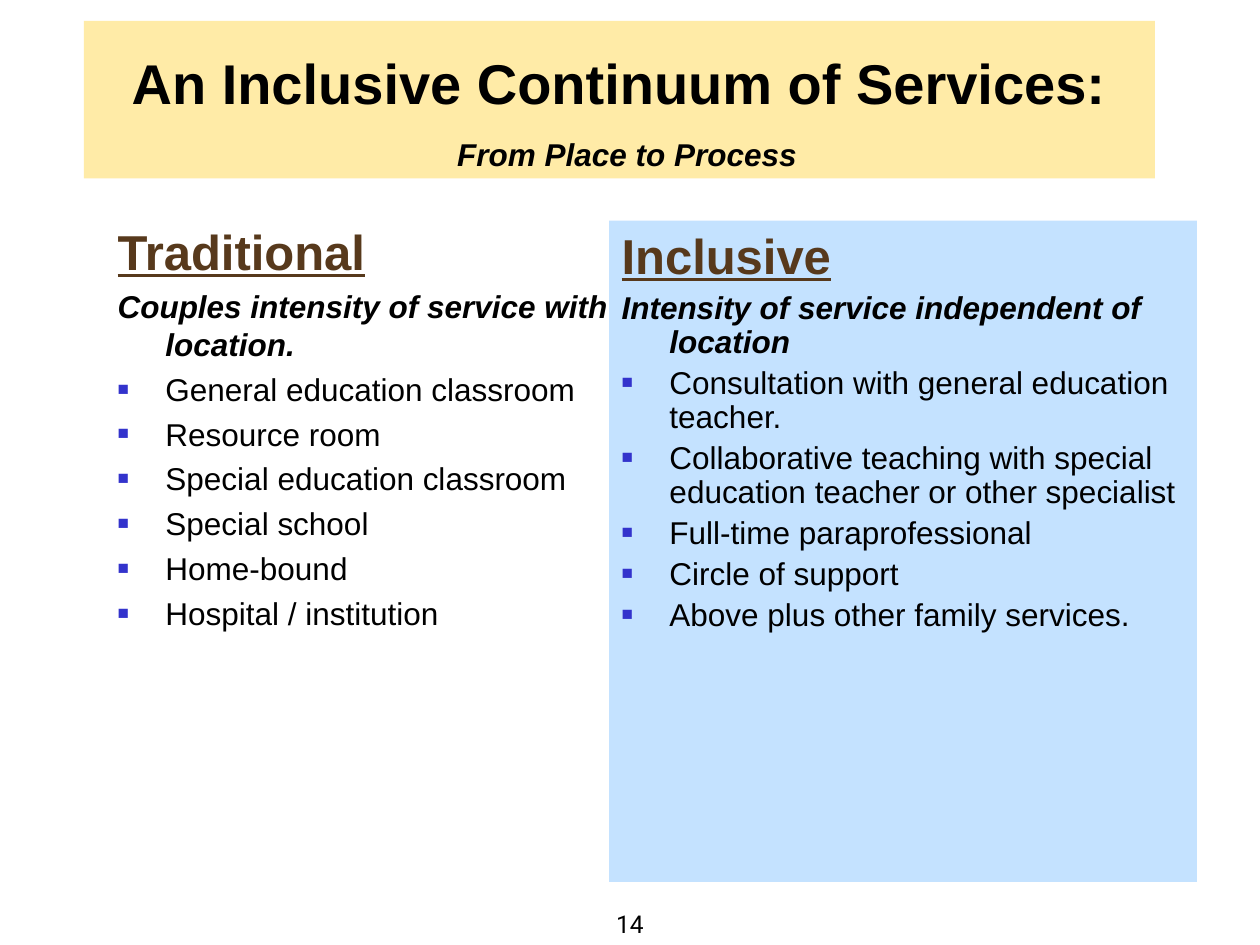
from dataclasses import dataclass

from lxml import etree
from pptx import Presentation
from pptx.dml.color import RGBColor
from pptx.enum.shapes import MSO_SHAPE
from pptx.enum.text import MSO_ANCHOR, MSO_AUTO_SIZE, PP_ALIGN
from pptx.oxml.ns import qn
from pptx.util import Inches, Pt

RECTANGLE = MSO_SHAPE.RECTANGLE
TOP, BOTTOM = MSO_ANCHOR.TOP, MSO_ANCHOR.BOTTOM
LEFT, CENTER = PP_ALIGN.LEFT, PP_ALIGN.CENTER
NO_AUTOFIT = MSO_AUTO_SIZE.NONE
COLUMNS, ROWS = 120, 90


@dataclass(frozen=True)
class Theme:
    font: str = "Arial"
    number_font: str = "Roboto"
    text: str = "000000"
    heading: str = "57391C"
    bullet: str = "3333CC"
    banner: str = "FFEBA7"
    panel: str = "C4E2FF"
    title_size: int = 32
    heading_size: int = 28
    body_size: int = 18
    number_size: int = 14


THEME = Theme()
TRADITIONAL = (
    "Traditional",
    "Couples intensity of service with location.",
    ["General education classroom", "Resource room", "Special education classroom",
     "Special school", "Home-bound", "Hospital / institution"],
)
INCLUSIVE = (
    "Inclusive",
    "Intensity of service independent of location",
    ["Consultation with general education teacher.",
     "Collaborative teaching with special education teacher or other specialist",
     "Full-time paraprofessional", "Circle of support",
     "Above plus other family services."],
)


def cell_area(column, row, columns, rows):
    width, height = Inches(10) / COLUMNS, Inches(7.5) / ROWS
    return [round(value) for value in
            (column * width, row * height, columns * width, rows * height)]


def add_panel(page, area, color):
    panel = page.shapes.add_shape(RECTANGLE, *cell_area(*area))
    panel.shadow.inherit = False
    panel.fill.solid()
    panel.fill.fore_color.rgb = RGBColor.from_string(color)
    panel.line.fill.background()
    page.shapes._spTree.insert(2, panel._element)


def prepare_box(box, area, anchor=TOP, top_inset=0.05, wrap=True):
    box.left, box.top, box.width, box.height = cell_area(*area)
    frame = box.text_frame
    frame.auto_size = NO_AUTOFIT
    frame.word_wrap = wrap
    frame.vertical_anchor = anchor
    frame.margin_left = frame.margin_right = frame.margin_bottom = Inches(0.05)
    frame.margin_top = Inches(top_inset)
    return frame


def set_bullet(properties, bulleted):
    if not bulleted:
        etree.SubElement(properties, qn("a:buNone"))
        return
    color = etree.SubElement(properties, qn("a:buClr"))
    etree.SubElement(color, qn("a:srgbClr"), val=THEME.bullet)
    etree.SubElement(properties, qn("a:buSzPct"), val="60000")
    etree.SubElement(properties, qn("a:buChar"), char="■")


def write(frame, text, size=THEME.body_size, font=THEME.font, color=THEME.text,
          bold=False, italic=False, underline=False, align=LEFT, spacing=1.0,
          before=0, margin=0, hanging=0, bulleted=False):
    first = frame.paragraphs[0]
    para = frame.add_paragraph() if first.runs else first
    properties = para._p.get_or_add_pPr()
    properties.set("marL", str(Inches(margin)))
    properties.set("indent", str(-Inches(hanging)))
    set_bullet(properties, bulleted)
    para.alignment = align
    para.line_spacing = spacing
    para.space_before = Pt(before)
    span = para.add_run()
    span.text = text
    span.font.name = font
    span.font.size = Pt(size)
    span.font.bold = bold
    span.font.italic = italic
    span.font.underline = underline
    span.font.color.rgb = RGBColor.from_string(color)


def fill_title(box):
    frame = prepare_box(box, (8.6, 4.9, 100.8, 12.1), anchor=BOTTOM)
    layout = dict(bold=True, align=CENTER, spacing=0.8, margin=0.12)
    write(frame, "An Inclusive Continuum of Services: ", size=THEME.title_size, **layout)
    write(frame, "From Place to Process", italic=True, before=15, **layout)


def fill_list(box, area, content, spacing):
    heading, summary, items = content
    frame = prepare_box(box, area, top_inset=0.09)
    layout = dict(spacing=spacing, margin=0.38, hanging=0.38)
    write(frame, heading, size=THEME.heading_size, color=THEME.heading,
          bold=True, underline=True, **layout)
    write(frame, summary, bold=True, italic=True, before=4, **layout)
    for item in items:
        write(frame, item, before=4, bulleted=True, **layout)


def add_page_number(page, number):
    area = (58, 86, 4, 4)
    box = page.shapes.add_textbox(*cell_area(*area))
    frame = prepare_box(box, area, anchor=BOTTOM, wrap=False)
    write(frame, number, size=THEME.number_size, font=THEME.number_font, align=CENTER)


def main():
    deck = Presentation()
    deck.slide_width, deck.slide_height = Inches(10), Inches(7.5)
    page = deck.slides.add_slide(deck.slide_layouts[3])
    title, traditional, inclusive = page.placeholders
    add_panel(page, (58, 21, 56, 63), THEME.panel)
    add_panel(page, (8, 2, 102, 15), THEME.banner)
    fill_title(title)
    fill_list(traditional, (10.6, 20, 48.8, 39.5), TRADITIONAL, 1.0)
    fill_list(inclusive, (58.6, 21, 54.8, 46.8), INCLUSIVE, 0.9)
    add_page_number(page, "14")
    deck.save("out.pptx")


if __name__ == "__main__":
    main()
